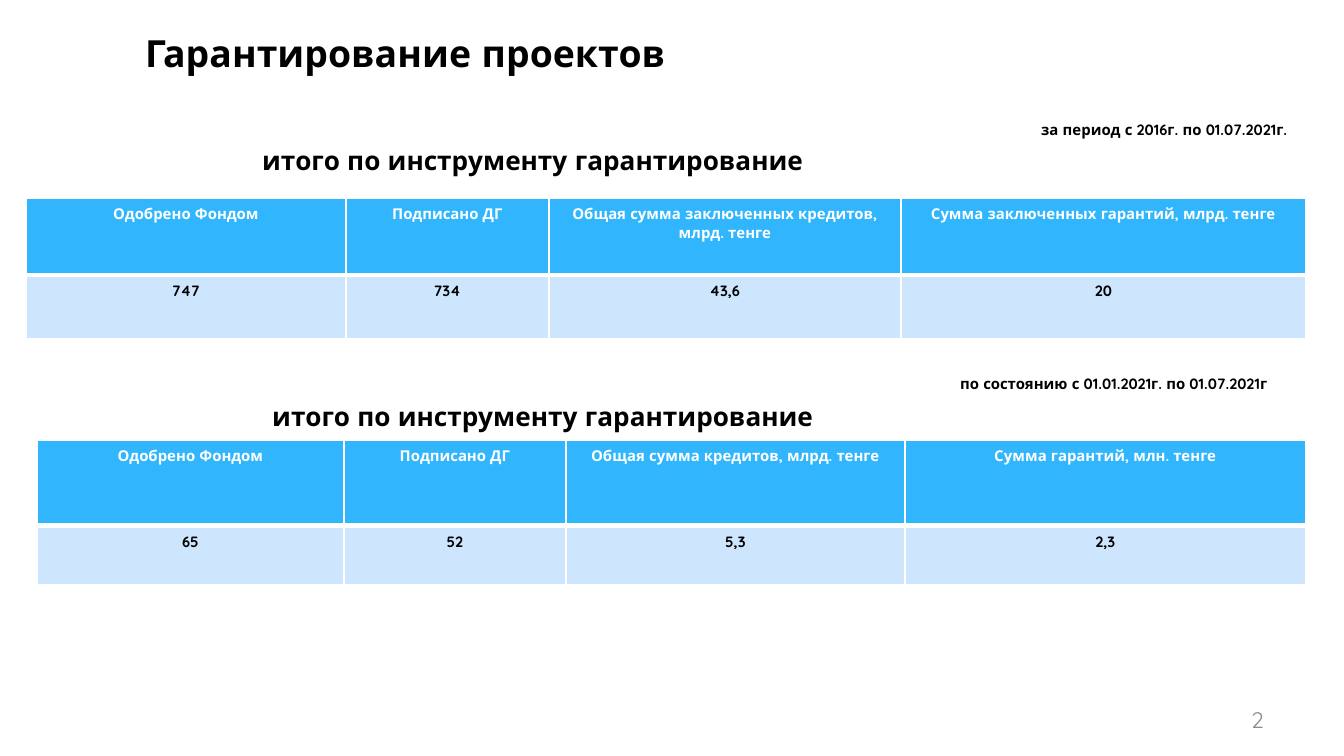
"""Build the slide on project guarantees with two summary tables."""
from dataclasses import dataclass

from pptx import Presentation
from pptx import util as u
from pptx.dml.color import RGBColor
from pptx.enum import text
from pptx.oxml import xmlchemy

SUBTITLE = "итого по инструменту гарантирование"
LEFT, CENTER, RIGHT = text.PP_ALIGN.LEFT, text.PP_ALIGN.CENTER, text.PP_ALIGN.RIGHT
TOP, MIDDLE = text.MSO_ANCHOR.TOP, text.MSO_ANCHOR.MIDDLE


@dataclass(frozen=True)
class Theme:
    font: str = "Quicksand"
    black: str = "000000"
    white: str = "FFFFFF"
    gray: str = "8C8C8C"
    header: str = "31B6FD"
    body: str = "CEE5FE"
    title: int = 20
    subtitle: int = 14
    page: int = 12
    small: int = 8
    thin: int = 1
    thick: int = 3


THEME = Theme()
SLIDE_SIZE = (1344, 756)
EMU_PER_PX = u.Inches(10) / SLIDE_SIZE[0]

TEXTS = [
    ("2", (964, 700, 313, 40), THEME.page, THEME.gray, False, RIGHT, MIDDLE),
    ("Гарантирование проектов", (132, 0, 656, 105), THEME.title, THEME.black, True, LEFT, MIDDLE),
    ("за период с 2016г. по 01.07.2021г.", (1028, 114, 317, 32), THEME.small, THEME.black, True, LEFT, TOP),
    (SUBTITLE, (249, 138, 814, 46), THEME.subtitle, THEME.black, True, LEFT, TOP),
    (SUBTITLE, (259, 394, 593, 46), THEME.subtitle, THEME.black, True, LEFT, TOP),
    ("по состоянию с 01.01.2021г. по 01.07.2021г", (947, 368, 349, 31), THEME.small, THEME.black, True, LEFT, TOP),
]

TABLES = [
    {
        "origin": (26, 198),
        "columns": (320, 203, 352, 405),
        "rows": (77, 64),
        "content": [
            ("Одобрено Фондом", "Подписано ДГ", "Общая сумма заключенных кредитов, млрд. тенге",
             "Сумма заключенных гарантий, млрд. тенге"),
            ("747", "734", "43,6", "20"),
        ],
    },
    {
        "origin": (37, 440),
        "columns": (307, 222, 339, 401),
        "rows": (86, 59),
        "content": [
            ("Одобрено Фондом", "Подписано ДГ", "Общая сумма кредитов, млрд. тенге",
             "Сумма гарантий, млн. тенге"),
            ("65", "52", "5,3", "2,3"),
        ],
    },
]


def px(value):
    return u.Emu(round(value * EMU_PER_PX))


def write(frame, words, size, color, bold, align):
    frame.text = words
    paragraph = frame.paragraphs[0]
    paragraph.alignment = align
    font = paragraph.runs[0].font
    font.name, font.size, font.bold = THEME.font, u.Pt(size), bold
    font.color.rgb = RGBColor.from_string(color)


def add_text(slide, words, box, size, color, bold, align, anchor):
    frame = slide.shapes.add_textbox(*map(px, box)).text_frame
    frame.word_wrap = True
    frame.vertical_anchor = anchor
    write(frame, words, size, color, bold, align)


def add_borders(cell, widths):
    properties = cell._tc.get_or_add_tcPr()
    for side, width in widths.items():
        line = xmlchemy.OxmlElement(f"a:ln{side}")
        line.set("w", str(u.Pt(width)))
        fill = xmlchemy.OxmlElement("a:solidFill")
        color = xmlchemy.OxmlElement("a:srgbClr")
        color.set("val", THEME.white)
        fill.append(color)
        line.append(fill)
        properties.append(line)


def add_summary(slide, origin, columns, rows, content):
    size = (sum(columns), sum(rows))
    table = slide.shapes.add_table(len(rows), len(columns), *map(px, origin + size)).table
    for column, width in zip(table.columns, columns):
        column.width = px(width)
    for index, (row, height, values) in enumerate(zip(table.rows, rows, content)):
        row.height = px(height)
        header = index == 0
        top, bottom = (THEME.thin, THEME.thick) if header else (THEME.thick, THEME.thin)
        for cell, value in zip(row.cells, values):
            add_borders(cell, {"L": THEME.thin, "R": THEME.thin, "T": top, "B": bottom})
            cell.fill.solid()
            cell.fill.fore_color.rgb = RGBColor.from_string(THEME.header if header else THEME.body)
            write(cell.text_frame, value, THEME.small, THEME.white if header else THEME.black, True, CENTER)


def main():
    presentation = Presentation()
    presentation.slide_width, presentation.slide_height = map(px, SLIDE_SIZE)
    slide = presentation.slides.add_slide(presentation.slide_layouts[6])
    for item in TEXTS:
        add_text(slide, *item)
    for item in TABLES:
        add_summary(slide, **item)
    presentation.save("out.pptx")


if __name__ == "__main__":
    main()
